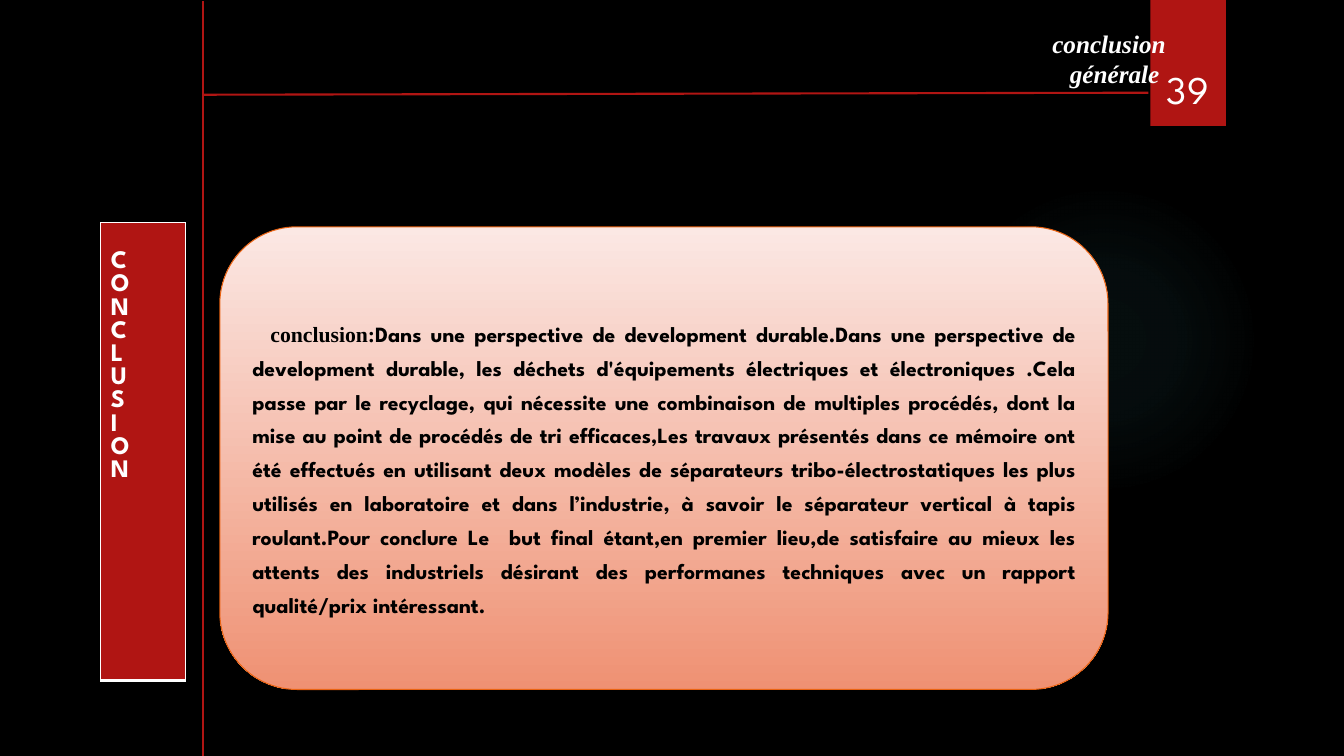
from dataclasses import dataclass

from lxml.etree import SubElement
from pptx import Presentation
from pptx.dml.color import RGBColor
from pptx.enum.shapes import MSO_CONNECTOR, MSO_SHAPE
from pptx.enum.text import MSO_ANCHOR, PP_ALIGN
from pptx.oxml import parse_xml
from pptx.oxml.ns import nsdecls, qn
from pptx.util import Inches, Pt

SECTION = "conclusion générale "
PAGE_NUMBER = "39"
SIDE_TITLE = "CONCLUSION"
LEAD = "conclusion:"
BODY = (
    "Dans une perspective de development durable.Dans une perspective de development durable, "
    "les déchets d'équipements électriques et électroniques .Cela passe par le recyclage, qui "
    "nécessite une combinaison de multiples procédés, dont la mise au point de procédés de tri "
    "efficaces,Les travaux présentés dans ce mémoire ont été effectués en utilisant deux modèles "
    "de séparateurs tribo-électrostatiques les plus utilisés en laboratoire et dans l’industrie, "
    "à savoir le séparateur vertical à tapis roulant.Pour conclure Le  but final étant,en premier "
    "lieu,de satisfaire au mieux les attents des industriels désirant des performanes techniques "
    "avec un rapport qualité/prix intéressant."
)


@dataclass(frozen=True)
class Theme:
    back: str = "000000"
    ink: str = "000000"
    light: str = "FFFFFF"
    red: str = "B01513"
    glow: str = "50B9C1"
    panel_top: str = "FBE8E4"
    panel_bottom: str = "EF9173"
    panel_edge: str = "EA6312"
    sans: str = "League Spartan"
    serif: str = "Times New Roman"
    body_size: float = 15.5
    title_size: float = 18
    number_size: float = 28


THEME = Theme()
WIDTH, HEIGHT = 13.33, 7.5
RULE_X, RULE_Y = 2.01, 0.94
GLOW_STOPS = [(0, 7), (36, 6), (69, 0)]  # position and opacity, in percent
SIDE_BORDERS = {"a:lnL": 1, "a:lnR": 1, "a:lnT": 1, "a:lnB": 3}

BOXES = {
    "glow": (9.41, 1.83, 3.08, 3.08),
    "tab": (11.41, 0, 0.75, 1.25),
    "number": (11.32, 0.32, 0.92, 0.84),
    "panel": (2.18, 2.25, 8.81, 4.59),
    "side": (1, 2.21, 0.84, 4.54),
    "section": (9.71, 0.23, 1.95, 0.71),
}
RULES = [
    ((RULE_X, RULE_Y), (11.39, 0.92)),
    ((RULE_X, 0.01), (RULE_X, HEIGHT + 0.01)),
]


def box(part):
    return [Inches(length) for length in BOXES[part]]


def rgb(colour):
    return RGBColor.from_string(colour)


def apply(target, **values):
    for name, value in values.items():
        setattr(target, name, value)


def add_run(paragraph, text, face, size, colour, **style):
    run = paragraph.add_run()
    run.text = text
    apply(run.font, name=face, size=Pt(size), **style)
    run.font.color.rgb = rgb(colour)


def add_panel(slide, kind, part):
    shape = slide.shapes.add_shape(kind, *box(part))
    shape.shadow.inherit = False
    shape.line.fill.background()
    return shape


def add_glow(slide):
    glow = add_panel(slide, MSO_SHAPE.OVAL, "glow")
    stops = "".join(
        f'<a:gs pos="{position * 1000}"><a:srgbClr val="{THEME.glow}">'
        f'<a:alpha val="{opacity * 1000}"/></a:srgbClr></a:gs>'
        for position, opacity in GLOW_STOPS
    )
    gradient = parse_xml(
        f'<a:gradFill {nsdecls("a")} rotWithShape="1"><a:gsLst>{stops}</a:gsLst>'
        '<a:path path="circle"><a:fillToRect l="50000" t="50000" r="50000" b="50000"/>'
        "</a:path></a:gradFill>"
    )
    glow.element.spPr.find(qn("a:prstGeom")).addnext(gradient)


def add_label(slide, part, text, align, anchor, face, size, **style):
    frame = slide.shapes.add_textbox(*box(part)).text_frame
    apply(frame, word_wrap=True, vertical_anchor=anchor)
    paragraph = frame.paragraphs[0]
    paragraph.alignment = align
    add_run(paragraph, text, face, size, THEME.light, **style)


def add_conclusion(slide):
    panel = add_panel(slide, MSO_SHAPE.ROUNDED_RECTANGLE, "panel")
    panel.fill.gradient()
    panel.fill.gradient_angle = 270
    ends = zip(panel.fill.gradient_stops, (0, 1), (THEME.panel_top, THEME.panel_bottom))
    for stop, position, colour in ends:
        stop.position = position
        stop.color.rgb = rgb(colour)
    panel.line.color.rgb = rgb(THEME.panel_edge)
    panel.line.width = Pt(0.75)

    frame = panel.text_frame
    apply(frame, word_wrap=True, vertical_anchor=MSO_ANCHOR.MIDDLE, margin_top=Inches(0.19))
    paragraph = frame.paragraphs[0]
    apply(paragraph, alignment=PP_ALIGN.JUSTIFY, line_spacing=1.3)
    paragraph._p.get_or_add_pPr().set("indent", str(Inches(0.18)))
    for text, face in ((LEAD, THEME.serif), (BODY, THEME.sans)):
        add_run(paragraph, text, face, THEME.body_size, THEME.ink, bold=True)


def add_side_title(slide):
    """One-cell table with one letter of the title on each line."""
    table = slide.shapes.add_table(1, 1, *box("side")).table
    apply(table, first_row=False, horz_banding=False)
    cell = table.cell(0, 0)
    cell.margin_top = Inches(0.28)
    properties = cell._tc.get_or_add_tcPr()
    for tag, width in SIDE_BORDERS.items():
        border = SubElement(properties, qn(tag), w=str(Pt(width)))
        fill = SubElement(border, qn("a:solidFill"))
        SubElement(fill, qn("a:srgbClr"), val=THEME.light)
    cell.fill.solid()
    cell.fill.fore_color.rgb = rgb(THEME.red)
    frame = cell.text_frame
    for index, letter in enumerate(SIDE_TITLE):
        paragraph = frame.add_paragraph() if index else frame.paragraphs[0]
        add_run(paragraph, letter, THEME.sans, THEME.title_size, THEME.light, bold=True)


def add_rule(slide, start, end):
    points = [Inches(length) for length in (*start, *end)]
    rule = slide.shapes.add_connector(MSO_CONNECTOR.STRAIGHT, *points)
    rule.line.color.rgb = rgb(THEME.red)
    rule.line.width = Pt(1.5)
    SubElement(rule.element.spPr, qn("a:effectLst"))


def main():
    deck = Presentation()
    apply(deck, slide_width=Inches(WIDTH), slide_height=Inches(HEIGHT))
    slide = deck.slides.add_slide(deck.slide_layouts[6])
    slide.background.fill.solid()
    slide.background.fill.fore_color.rgb = rgb(THEME.back)

    add_glow(slide)
    tab = add_panel(slide, MSO_SHAPE.RECTANGLE, "tab")
    tab.fill.solid()
    tab.fill.fore_color.rgb = rgb(THEME.red)
    add_label(slide, "number", PAGE_NUMBER, PP_ALIGN.CENTER, MSO_ANCHOR.BOTTOM,
              THEME.sans, THEME.number_size)
    add_conclusion(slide)
    add_side_title(slide)
    add_label(slide, "section", SECTION, PP_ALIGN.RIGHT, MSO_ANCHOR.TOP,
              THEME.serif, THEME.title_size, bold=True, italic=True)
    for start, end in RULES:
        add_rule(slide, start, end)
    deck.save("out.pptx")


if __name__ == "__main__":
    main()
